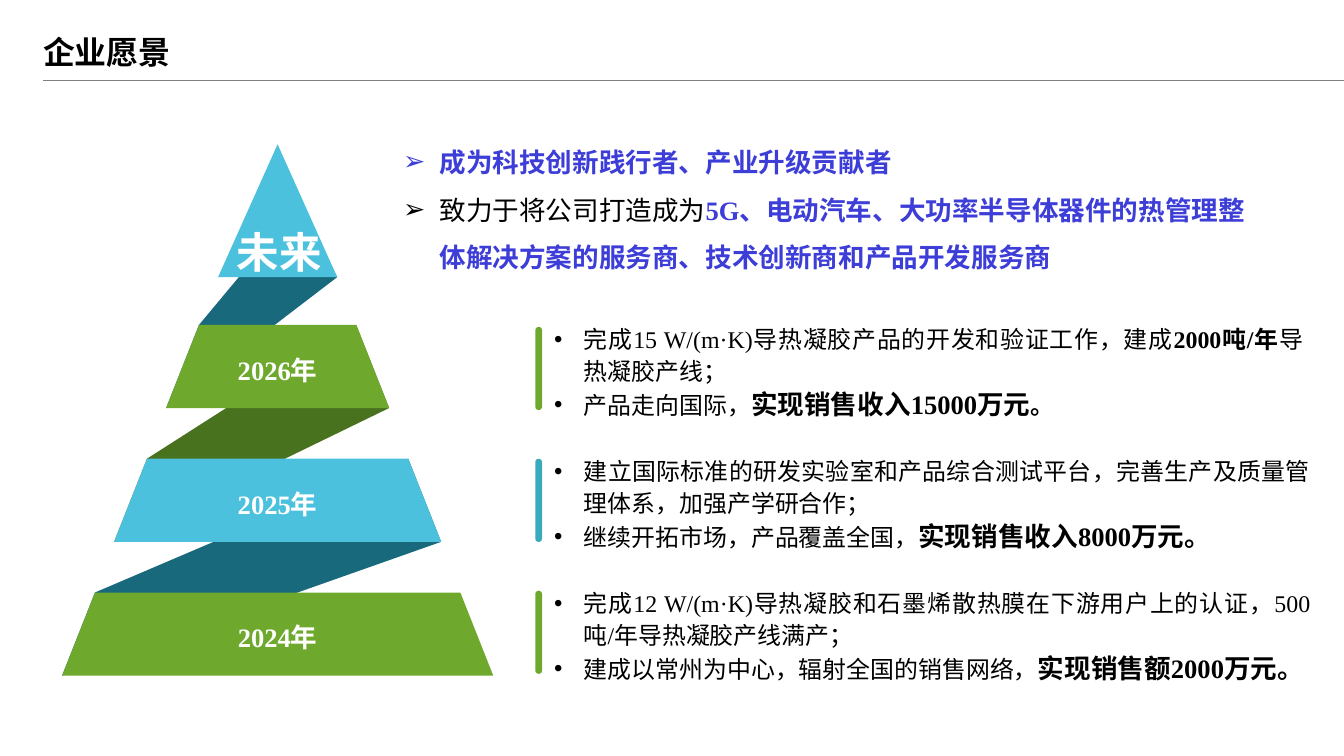
from lxml.etree import SubElement
from pptx import Presentation
from pptx.dml.color import RGBColor
from pptx.enum.shapes import MSO_CONNECTOR, MSO_SHAPE
from pptx.enum.text import MSO_ANCHOR, MSO_AUTO_SIZE, PP_ALIGN
from pptx.oxml.ns import qn
from pptx.util import Inches, Pt

WIDTH, HEIGHT = Inches(14.06), Inches(7.91)
LATIN, CJK = "Times New Roman", "Noto Sans CJK SC"
BLACK, WHITE, VIOLET, GREY = "000000", "FFFFFF", "3D3DD8", "808080"
GREEN, CYAN, TEAL = "6EA92D", "4BC1DD", "38AABA"
DARK_GREEN, DARK_CYAN = "49721E", "18697C"

AXIS = 20.66
APEX_TOP, APEX_BOTTOM, APEX_HALF = 19.09, 36.66, 4.43
FOLD_TOP, FOLD_HALF = 26.8, 1.74
TIER_TOP, TIER_PITCH, TIER_HEIGHT = 42.98, 17.7, 11
HALF_STEP, SLANT = 3.87, 2.45
GOAL_TOP, GOAL_PITCH = 41.97, 17.45
BAR_DROP = 1.27

TIERS = [("2026年", GREEN, DARK_CYAN), ("2025年", CYAN, DARK_GREEN), ("2024年", GREEN, DARK_CYAN)]

VISION = [
    [("成为科技创新践行者、产业升级贡献者", 20, VIOLET, True)],
    [("致力于将公司打造成为", 20, BLACK, False),
     ("5G、电动汽车、大功率半导体器件的热管理整体解决方案的服务商、技术创新商和产品开发服务商",
      20, VIOLET, True)],
]

GOALS = [
    (GREEN, 57.1, [
        [("完成15 W/(m·K)导热凝胶产品的开发和验证工作，建成", 18, BLACK, False),
         ("2000吨/年", 18, BLACK, True),
         ("导热凝胶产线；", 18, BLACK, False)],
        [("产品走向国际，", 18, BLACK, False),
         ("实现销售收入15000万元", 20, BLACK, True),
         ("。", 18, BLACK, True)]]),
    (TEAL, 57.65, [
        [("建立国际标准的研发实验室和产品综合测试平台，完善生产及质量管理体系，加强产学研合作；",
          18, BLACK, False)],
        [("继续开拓市场，产品覆盖全国，", 18, BLACK, False),
         ("实现销售收入8000万元。", 20, BLACK, True)]]),
    (GREEN, 57.65, [
        [("完成12 W/(m·K)导热凝胶和石墨烯散热膜在下游用户上的认证，500吨/年导热凝胶产线满产；",
          18, BLACK, False)],
        [("建成以常州为中心，辐射全国的销售网络，", 18, BLACK, False),
         ("实现销售额2000万元。", 20, BLACK, True)]]),
]


def across(columns):
    return round(WIDTH * columns / 100)


def down(rows):
    return round(HEIGHT * rows / 100)


def area(left, top, width, height):
    return across(left), down(top), across(width), down(height)


def rgb(code):
    return RGBColor.from_string(code)


def style(font, size, color, bold, name=LATIN):
    font.size, font.bold = Pt(size), bold
    font.color.rgb = rgb(color)
    font.name = name
    east_asian = SubElement(font._rPr, qn("a:ea"), typeface=CJK)
    font._rPr.find(qn("a:latin")).addnext(east_asian)


def paint(shape, color):
    shape.shadow.inherit = False
    shape.fill.solid()
    shape.fill.fore_color.rgb = rgb(color)
    shape.line.fill.background()


def add_outline(slide, corners, color):
    points = [(across(x), down(y)) for x, y in corners]
    builder = slide.shapes.build_freeform(*points[0])
    builder.add_line_segments(points[1:], close=True)
    paint(builder.convert_to_shape(), color)


def add_label(slide, words, center, top, width, size):
    frame = slide.shapes.add_textbox(*area(center - width / 2, top, width, 8.98)).text_frame
    frame.margin_left = frame.margin_right = frame.margin_top = frame.margin_bottom = 0
    frame.word_wrap = True
    frame.vertical_anchor = MSO_ANCHOR.MIDDLE
    label = frame.paragraphs[0]
    label.text, label.alignment, label.line_spacing = words, PP_ALIGN.CENTER, 1.2
    style(label.font, size, WHITE, True)


def add_bullets(slide, box, items, mark, indent, spacing, alignment):
    frame = slide.shapes.add_textbox(*area(*box)).text_frame
    frame.word_wrap = True
    frame.auto_size = MSO_AUTO_SIZE.SHAPE_TO_FIT_TEXT
    for index, pieces in enumerate(items):
        item = frame.add_paragraph() if index else frame.paragraphs[0]
        item.alignment, item.line_spacing = alignment, spacing
        properties = item._p.get_or_add_pPr()
        properties.set("marL", str(across(indent)))
        properties.set("indent", str(-across(indent)))
        SubElement(properties, qn("a:buFont"), typeface="Arial")
        SubElement(properties, qn("a:buChar"), char=mark)
        for words, *look in pieces:
            run = item.add_run()
            run.text = words
            style(item.font if len(pieces) == 1 else run.font, *look)


def add_heading(slide):
    title = slide.shapes.title
    title.left, title.top, title.width, title.height = area(2.49, 3.67, 11.02, 6.32)
    frame = title.text_frame
    frame.text = "企业愿景"
    frame.word_wrap = False
    frame.auto_size = MSO_AUTO_SIZE.NONE
    frame.vertical_anchor = MSO_ANCHOR.MIDDLE
    frame.paragraphs[0].alignment = PP_ALIGN.LEFT
    style(frame.paragraphs[0].font, 24, BLACK, True, CJK)
    rule = slide.shapes.add_connector(
        MSO_CONNECTOR.STRAIGHT, across(3.2), down(10.62), WIDTH, down(10.62))
    rule.line.color.rgb = rgb(GREY)
    rule.line.width = Pt(0.5)
    SubElement(rule._element.spPr, qn("a:effectLst"))


def tier_corners(index):
    top = TIER_TOP + index * TIER_PITCH
    half = APEX_HALF + (index + 1) * HALF_STEP
    return [(AXIS - half + SLANT, top), (AXIS + half - SLANT, top),
            (AXIS + half, top + TIER_HEIGHT), (AXIS - half, top + TIER_HEIGHT)]


def add_pyramid(slide):
    tiers = [tier_corners(index) for index in range(len(TIERS))]
    fold = [(AXIS + FOLD_HALF, FOLD_TOP), (AXIS + APEX_HALF, APEX_BOTTOM)]
    for corners, (_, _, shade) in zip(tiers, TIERS):
        add_outline(slide, [fold[0], corners[0], corners[3], fold[1]], shade)
        fold = corners[1:3]
    add_outline(slide, [(AXIS, APEX_TOP), (AXIS + APEX_HALF, APEX_BOTTOM),
                        (AXIS - APEX_HALF, APEX_BOTTOM)], CYAN)
    add_label(slide, "未来", AXIS + 0.11, 28.07, 2 * APEX_HALF, 32)
    for corners, (year, color, _) in zip(tiers, TIERS):
        add_outline(slide, corners, color)
        add_label(slide, year, AXIS, corners[0][1] + 1, corners[1][0] - corners[0][0], 20)


def add_goals(slide):
    for index, (color, width, items) in enumerate(GOALS):
        top = GOAL_TOP + index * GOAL_PITCH
        bar = slide.shapes.add_shape(
            MSO_SHAPE.ROUND_2_SAME_RECTANGLE, *area(39.83, top + BAR_DROP, 0.5, TIER_HEIGHT))
        bar.adjustments[0] = bar.adjustments[1] = 0.5
        paint(bar, color)
        add_bullets(slide, (40.54, top, width, 14.03), items, "•", 2.2, 1.1, PP_ALIGN.JUSTIFY)


def main():
    deck = Presentation()
    deck.slide_width, deck.slide_height = WIDTH, HEIGHT
    slide = deck.slides.add_slide(deck.slide_layouts[5])
    add_heading(slide)
    add_pyramid(slide)
    add_goals(slide)
    add_bullets(slide, (29.3, 16.56, 65.65, 19.6), VISION, "➢", 2.7, 1.5, PP_ALIGN.LEFT)
    deck.save("out.pptx")


if __name__ == "__main__":
    main()
